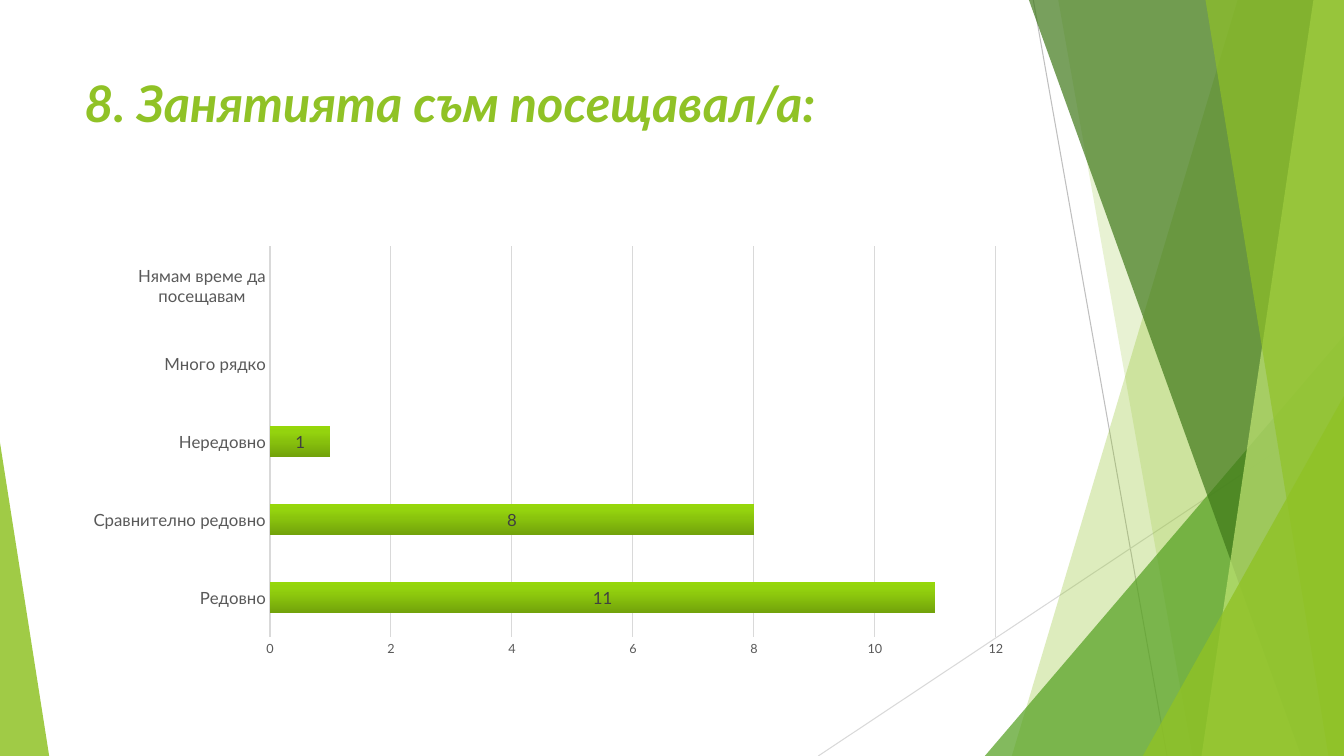
import copy

from lxml import etree
from pptx import Presentation
from pptx import util as u
from pptx.chart.data import CategoryChartData
from pptx.dml.color import RGBColor
from pptx.enum import chart as charts, shapes, text
from pptx.oxml.ns import qn

FONT = "Lato"
GREEN = "90C226"
GRID = "D9D9D9"
AXIS_TEXT = "595959"
WIDTH, HEIGHT = 33.87, 19.05
ATTENDANCE = {
    "Редовно": 11,
    "Сравнително редовно": 8,
    "Нередовно": 1,
    "Много рядко": None,
    "Нямам време да посещавам": None,
}
BAR_GRADIENT = [(0, "72A20B"), (0.8, "94D30E"), (1, "96D70A")]


def rgb(color):
    return RGBColor.from_string(color)


def style_font(font, size, color):
    font.name = FONT
    font.size = u.Pt(size)
    font.color.rgb = rgb(color)


def style_shape(shape, color, opacity):
    """Fill with a see-through colour (opacity in percent), without outline or shadow."""
    shape.shadow.inherit = False
    shape.line.fill.background()
    shape.fill.solid()
    shape.fill.fore_color.rgb = rgb(color)
    color_element = shape._element.spPr.find(f".//{qn('a:srgbClr')}")
    etree.SubElement(color_element, qn("a:alpha"), val=str(opacity * 1000))


def add_line(slide, start, end, color):
    points = [u.Cm(value) for value in start + end]
    line = slide.shapes.add_connector(shapes.MSO_CONNECTOR.STRAIGHT, *points)
    line.line.color.rgb = rgb(color)
    line.line.width = u.Pt(0.75)
    etree.SubElement(line._element.spPr, qn("a:effectLst"))


def add_facet(slide, top_x, bottom_x, color, opacity):
    """Full-height panel from a slanted left edge to the slide's right edge."""
    builder = slide.shapes.build_freeform(u.Cm(top_x), 0)
    corners = [(WIDTH, 0), (WIDTH, HEIGHT), (bottom_x, HEIGHT)]
    builder.add_line_segments([(u.Cm(x), u.Cm(y)) for x, y in corners])
    style_shape(builder.convert_to_shape(), color, opacity)


def add_corner(slide, left, top, width, apex, color, opacity):
    """Triangle standing on the bottom edge; apex is 0 at its left, 1 at its right."""
    shape = slide.shapes.add_shape(
        shapes.MSO_SHAPE.ISOSCELES_TRIANGLE,
        u.Cm(left), u.Cm(top), u.Cm(width), u.Cm(HEIGHT - top))
    shape.adjustments[0] = apex
    style_shape(shape, color, opacity)


def add_background(slide):
    add_line(slide, (26.04, 0), (29.41, HEIGHT), "BFBFBF")
    add_line(slide, (WIDTH, 10.24), (20.62, HEIGHT), GRID)
    add_facet(slide, 31.19, 25.5, GREEN, 30)
    add_facet(slide, 26.67, 30.05, GREEN, 20)
    add_corner(slide, 24.82, 8.46, 9.05, 1, "54A021", 72)
    add_facet(slide, 25.93, 32.79, "3F7819", 70)
    add_facet(slide, 33.1, 30.28, "C0E474", 70)
    add_facet(slide, 30.38, 33.48, GREEN, 65)
    add_corner(slide, 28.8, 9.98, 5.07, 1, GREEN, 80)
    add_corner(slide, 0, 11.15, 1.24, 0, GREEN, 85)


def add_title(slide, title):
    box = slide.shapes.add_textbox(u.Cm(1.88), u.Cm(1.7), u.Cm(23.88), u.Cm(3.35))
    frame = box.text_frame
    frame.word_wrap = True
    frame.vertical_anchor = text.MSO_ANCHOR.TOP
    paragraph = frame.paragraphs[0]
    paragraph.text = title
    style_font(paragraph.font, 36, GREEN)
    paragraph.font.bold = True
    paragraph.font.italic = True


def fill_gradient(series, stops):
    """Shade the bars from bottom to top."""
    fill = series.format.fill
    fill.gradient()
    fill.gradient_angle = 90
    last_stop = series._element.findall(f".//{qn('a:gs')}")[-1]
    last_stop.addnext(copy.deepcopy(last_stop))
    for stop, (position, color) in zip(fill.gradient_stops, stops):
        stop.position = position
        stop.color.rgb = rgb(color)


def style_axes(chart):
    categories, values = chart.category_axis, chart.value_axis
    for axis, size in ((categories, 12), (values, 9)):
        axis.major_tick_mark = charts.XL_TICK_MARK.NONE
        axis.minor_tick_mark = charts.XL_TICK_MARK.NONE
        style_font(axis.tick_labels.font, size, AXIS_TEXT)
    categories.format.line.color.rgb = rgb(GRID)
    categories.format.line.width = u.Pt(1)
    values.minimum_scale = 0
    values.maximum_scale = 12
    values.major_unit = 2
    values.format.line.fill.background()
    values.has_major_gridlines = True
    values.major_gridlines.format.line.color.rgb = rgb(GRID)
    values.major_gridlines.format.line.width = u.Pt(0.75)


def add_bar_chart(slide, answers):
    data = CategoryChartData()
    data.categories = answers.keys()
    data.add_series("Series 1", answers.values())
    chart = slide.shapes.add_chart(
        charts.XL_CHART_TYPE.BAR_STACKED,
        u.Cm(1.88), u.Cm(5.99), u.Cm(23.88), u.Cm(10.77), data).chart
    chart.has_title = False
    chart.has_legend = False
    style_font(chart.font, 10, "000000")
    style_axes(chart)
    plot = chart.plots[0]
    plot.vary_by_categories = False
    plot.gap_width = 150
    plot.overlap = 100
    fill_gradient(plot.series[0], BAR_GRADIENT)
    plot.has_data_labels = True
    plot.data_labels.show_value = True
    style_font(plot.data_labels.font, 12, "404040")


def main():
    presentation = Presentation()
    presentation.slide_width = u.Cm(WIDTH)
    presentation.slide_height = u.Cm(HEIGHT)
    slide = presentation.slides.add_slide(presentation.slide_layouts[6])
    add_background(slide)
    add_title(slide, "8. Занятията съм посещавал/а:")
    add_bar_chart(slide, ATTENDANCE)
    presentation.save("out.pptx")


if __name__ == "__main__":
    main()
